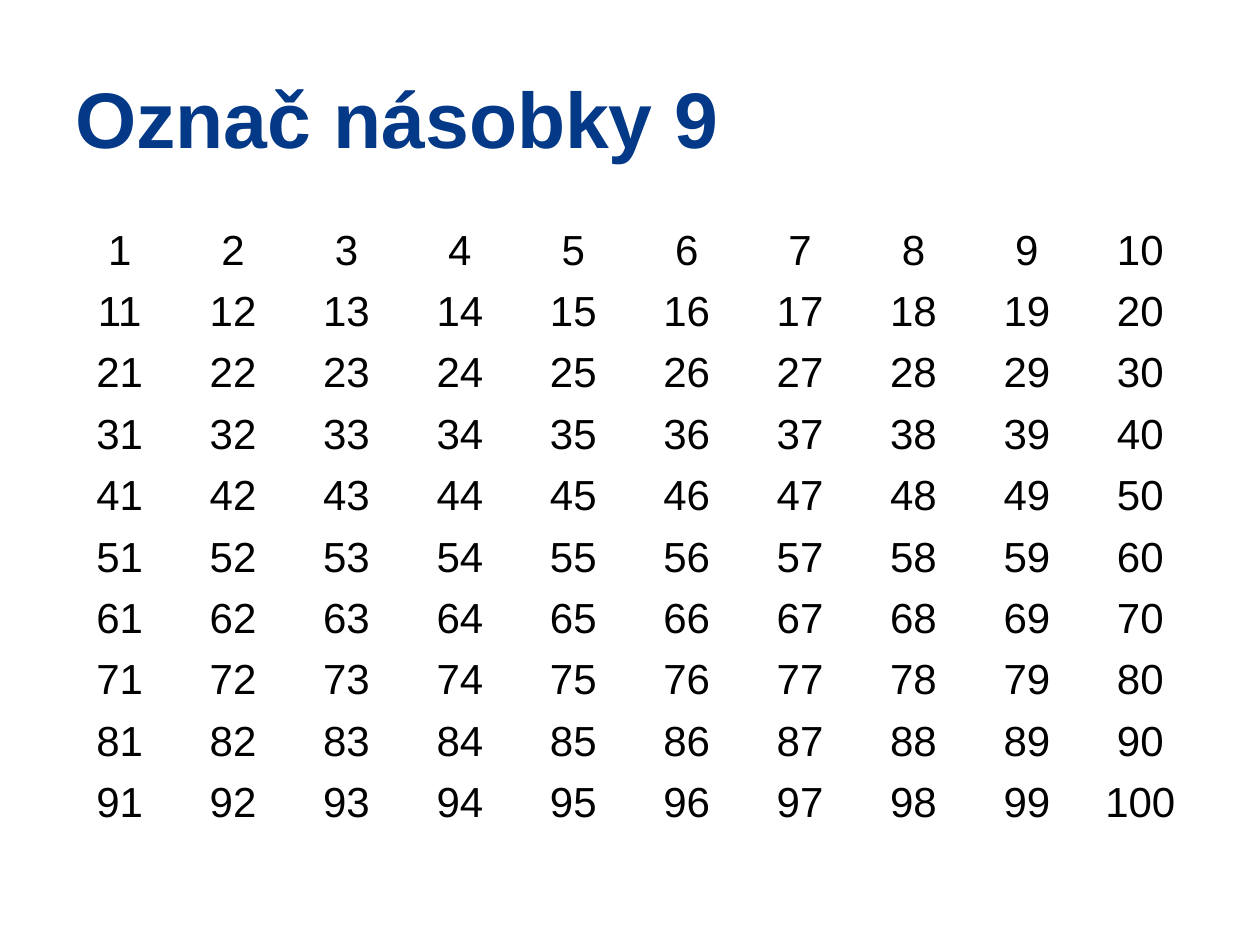
from pptx import Presentation
from pptx.dml.color import RGBColor
from pptx.enum.text import MSO_ANCHOR, PP_ALIGN
from pptx.util import Cm, Pt

COLORS = {"heading": "043988", "number": "000000"}
LEFT, WIDTH = 1.27, 22.86
SIDE = 10  # numbers per row and per column
ROW_HEIGHT = 1.2


class NumberSlide:
    """Holds the text style and the current slide."""

    font_name = "Arial"

    def __init__(self, slide):
        self.slide = slide

    def add_run(self, paragraph, text, size, color, bold=False):
        run = paragraph.add_run()
        run.text = text
        run.font.name = self.font_name
        run.font.size = Pt(size)
        run.font.bold = bold
        run.font.color.rgb = RGBColor.from_string(COLORS[color])

    def add_heading(self, text, top, height):
        heading = self.slide.shapes.add_textbox(
            Cm(LEFT), Cm(top), Cm(WIDTH), Cm(height))
        frame = heading.text_frame
        frame.word_wrap = True
        frame.vertical_anchor = MSO_ANCHOR.MIDDLE
        self.add_run(frame.paragraphs[0], text, 45, "heading", bold=True)

    def add_number_grid(self, top):
        grid = self.slide.shapes.add_table(
            SIDE, SIDE, Cm(LEFT), Cm(top), Cm(WIDTH), Cm(SIDE * ROW_HEIGHT)).table
        grid.first_row = False
        grid.horz_banding = False
        for number, cell in enumerate(grid.iter_cells(), start=1):
            cell.fill.background()
            cell.margin_top, cell.margin_bottom = Cm(0.13), Cm(0.09)
            paragraph = cell.text_frame.paragraphs[0]
            paragraph.alignment = PP_ALIGN.CENTER
            self.add_run(paragraph, str(number), 24, "number")


def main():
    presentation = Presentation()
    presentation.slide_width, presentation.slide_height = Cm(25.4), Cm(19.05)
    blank = presentation.slide_layouts[6]
    multiples = NumberSlide(presentation.slides.add_slide(blank))

    # Task heading
    multiples.add_heading("Označ násobky 9", top=0.76, height=3.18)

    # Numbers from 1 to 100
    multiples.add_number_grid(top=4.45)

    presentation.save("out.pptx")


if __name__ == "__main__":
    main()
